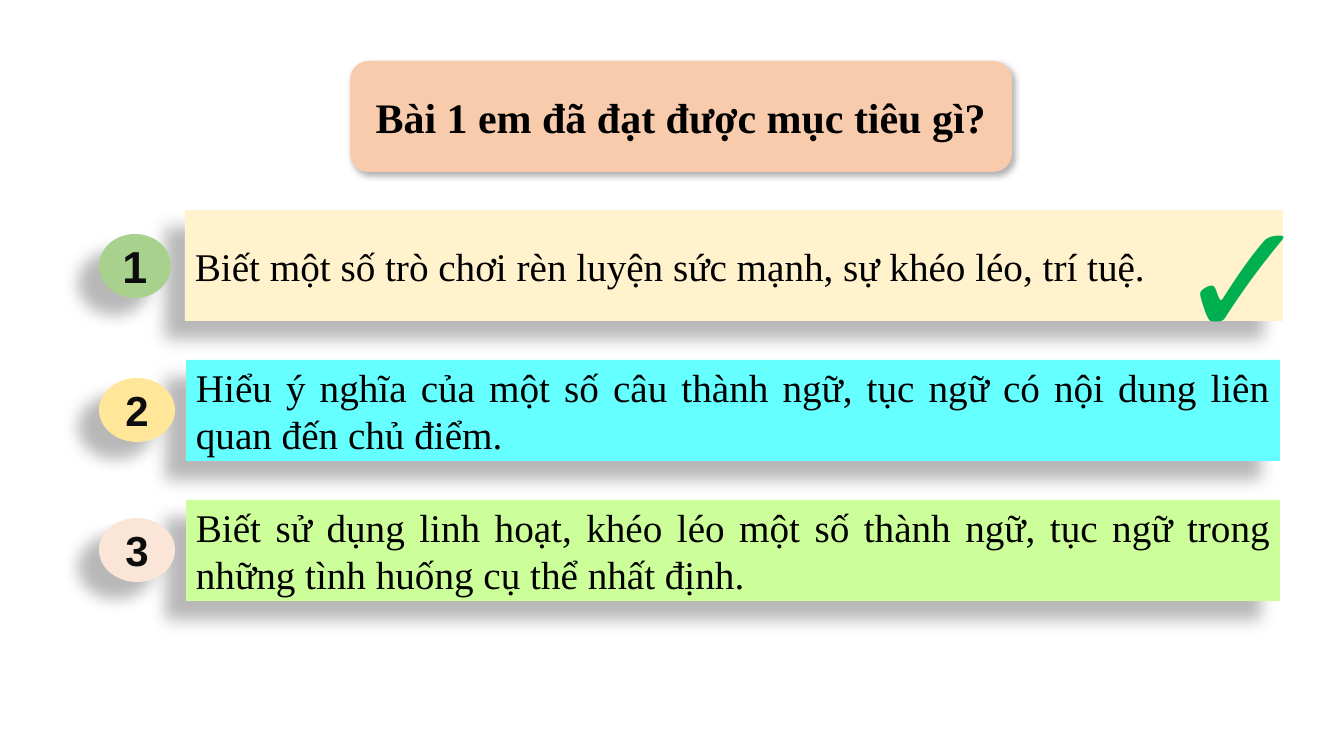
import pptx
import pptx.util
import pptx.dml.color
import pptx.enum.shapes
import pptx.enum.text
import pptx.oxml
import pptx.oxml.ns

EMU_PER_PX = 914400 / 100.8
SHAPES = pptx.enum.shapes.MSO_SHAPE
ALIGN = pptx.enum.text.PP_ALIGN
SERIF = "Times New Roman"
ROW_SHADOW = (28, 11.8, 19.7, 141)
TITLE_SHADOW = (30, 4.5, 2.6, 53)

presentation = pptx.Presentation()
presentation.slide_width = round(1344 * EMU_PER_PX)
presentation.slide_height = round(756 * EMU_PER_PX)
slide = presentation.slides.add_slide(presentation.slide_layouts[6])


def write_text(shape, text, font_name, size, color, bold=False, align=ALIGN.LEFT):
    shape.text_frame.word_wrap = True
    paragraph = shape.text_frame.paragraphs[0]
    paragraph.text = text
    paragraph.alignment = align
    paragraph.font.name = font_name
    paragraph.font.size = pptx.util.Pt(size)
    paragraph.font.bold = bold
    paragraph.font.color.rgb = pptx.dml.color.RGBColor.from_string(color)


def add_panel(preset, box, fill, shadow):
    shape = slide.shapes.add_shape(preset, *[round(length * EMU_PER_PX) for length in box])
    shape.fill.solid()
    shape.fill.fore_color.rgb = pptx.dml.color.RGBColor.from_string(fill)
    shape.line.fill.background()
    shape.shadow.inherit = False
    shape.text_frame.vertical_anchor = pptx.enum.text.MSO_ANCHOR.MIDDLE
    opacity, blur, distance, angle = shadow
    effects = shape._element.spPr.find(pptx.oxml.ns.qn("a:effectLst"))
    effects.append(pptx.oxml.parse_xml(
        f'<a:outerShdw {pptx.oxml.ns.nsdecls("a")} blurRad="{pptx.util.Pt(blur)}" '
        f'dist="{pptx.util.Pt(distance)}" dir="{angle * 60000}" algn="ctr" rotWithShape="0">'
        f'<a:srgbClr val="000000"><a:alpha val="{opacity * 1000}"/></a:srgbClr></a:outerShdw>'))
    return shape


goals = [
    ("Biết một số trò chơi rèn luyện sức mạnh, sự khéo léo, trí tuệ.",
     (185, 210, 1098, 111), "FFF2CC", (99, 234, 72, 64), "A9D18E", 32),
    ("Hiểu ý nghĩa của một số câu thành ngữ, tục ngữ có nội dung liên quan đến chủ điểm.",
     (186, 360, 1094, 101), "66FFFF", (99, 378, 76, 64), "FFE699", 30),
    ("Biết sử dụng linh hoạt, khéo léo một số thành ngữ, tục ngữ trong những tình huống cụ thể nhất định.",
     (186, 500, 1094, 101), "CCFF99", (99, 518, 76, 64), "FBE5D6", 30),
]
for number, (text, bar_box, bar_fill, badge_box, badge_fill, badge_size) in enumerate(goals, 1):
    bar = add_panel(SHAPES.RECTANGLE, bar_box, bar_fill, ROW_SHADOW)
    write_text(bar, text, SERIF, 28, "000000", align=ALIGN.JUSTIFY)
    badge = add_panel(SHAPES.OVAL, badge_box, badge_fill, ROW_SHADOW)
    write_text(badge, str(number), "Arial", badge_size, "0D0D0D", True, ALIGN.CENTER)

title = add_panel(SHAPES.ROUNDED_RECTANGLE, (350, 61, 662, 111), "F8CBAD", TITLE_SHADOW)
write_text(title, "Bài 1 em đã đạt được mục tiêu gì?", SERIF, 30, "000000", True, ALIGN.CENTER)

check_box = [round(length * EMU_PER_PX) for length in (1167, 172, 113, 206)]
check_mark = slide.shapes.add_textbox(*check_box)
write_text(check_mark, "✓", "Calibri", 115, "00B050")

presentation.save("out.pptx")
